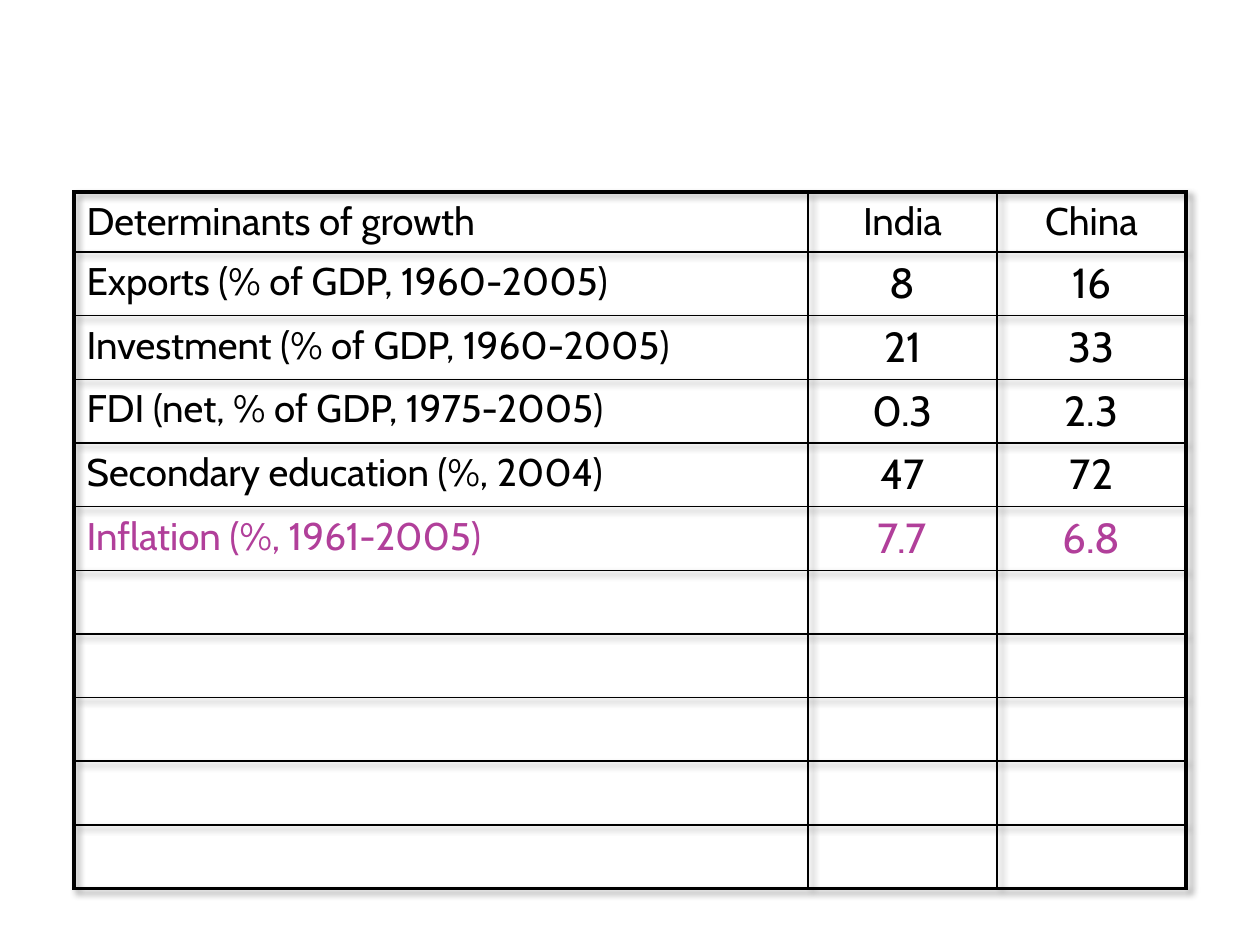
from typing import NamedTuple

from lxml.etree import SubElement
from pptx import Presentation
from pptx.dml.color import RGBColor
from pptx.enum.text import PP_ALIGN as Align
from pptx.oxml import parse_xml
from pptx.oxml.ns import nsdecls, qn
from pptx.util import Emu, Pt

PX = 914400 / 126
FONT = "Cabin"
COLORS = {"text": "000000", "highlight": "B13F9A", "border": "000000"}
THICK, THIN = 2.25, 1

TABLE_LEFT, TABLE_TOP = 74, 192
COLUMN_WIDTHS = (734, 189, 189)
HEADER_HEIGHT, BODY_HEIGHT = 60, 636
BODY_ROWS = 10
LABEL_SIZE = 22


class Determinant(NamedTuple):
    label: str
    india: str
    china: str
    color: str = "text"
    value_size: int = 24


DETERMINANTS = (
    Determinant("Determinants of growth", "India", "China", value_size=LABEL_SIZE),
    Determinant("Exports (% of GDP, 1960-2005)", "8", "16"),
    Determinant("Investment (% of GDP, 1960-2005)", "21", "33"),
    Determinant("FDI (net, % of GDP, 1975-2005)", "0.3", "2.3"),
    Determinant("Secondary education (%, 2004)", "47", "72"),
    Determinant("Inflation (%, 1961-2005)", "7.7", "6.8", "highlight"),
)


def px(length: float) -> Emu:
    return Emu(round(length * PX))


def add_text(paragraph, text: str, size: int, color: str) -> None:
    run = paragraph.add_run()
    run.text = text
    run.font.name = FONT
    run.font.size = Pt(size)
    run.font.color.rgb = RGBColor.from_string(COLORS[color])


def set_borders(cell, left: float, right: float, top: float, bottom: float) -> None:
    properties = cell._tc.get_or_add_tcPr()
    for side, width in zip("LRTB", (left, right, top, bottom)):
        line = SubElement(properties, qn(f"a:ln{side}"), w=str(Pt(width)))
        fill = SubElement(line, qn("a:solidFill"))
        SubElement(fill, qn("a:srgbClr"), val=COLORS["border"])


def add_table_shadow(table) -> None:
    shadow = parse_xml(
        f'<a:effectLst {nsdecls("a")}>'
        '<a:outerShdw blurRad="50800" dist="38100" dir="2700000" algn="tl" rotWithShape="0">'
        '<a:srgbClr val="000000"><a:alpha val="40000"/></a:srgbClr>'
        "</a:outerShdw></a:effectLst>"
    )
    table._tbl.tblPr.insert(0, shadow)


def add_growth_table(slide) -> None:
    last_row, last_column = BODY_ROWS, len(COLUMN_WIDTHS) - 1
    table = slide.shapes.add_table(
        last_row + 1, last_column + 1, px(TABLE_LEFT), px(TABLE_TOP),
        px(sum(COLUMN_WIDTHS)), px(HEADER_HEIGHT + BODY_HEIGHT),
    ).table
    table.first_row = table.horz_banding = False
    add_table_shadow(table)

    for column, width in zip(table.columns, COLUMN_WIDTHS):
        column.width = px(width)
    for r, row in enumerate(table.rows):
        row.height = px(BODY_HEIGHT / BODY_ROWS if r else HEADER_HEIGHT)
        for c, cell in enumerate(row.cells):
            set_borders(
                cell,
                left=THIN if c else THICK,
                right=THICK if c == last_column else THIN,
                top=THIN if r else THICK,
                bottom=THICK if r == last_row else THIN,
            )
            cell.fill.background()

    for r, entry in enumerate(DETERMINANTS):
        for c, text in enumerate((entry.label, entry.india, entry.china)):
            paragraph = table.cell(r, c).text_frame.paragraphs[0]
            paragraph.alignment = Align.CENTER if c else Align.LEFT
            add_text(paragraph, text, entry.value_size if c else LABEL_SIZE, entry.color)


def main() -> None:
    deck = Presentation()
    deck.slide_width, deck.slide_height = px(1260), px(945)
    slide = deck.slides.add_slide(deck.slide_layouts[6])
    add_growth_table(slide)
    deck.save("out.pptx")


if __name__ == "__main__":
    main()
